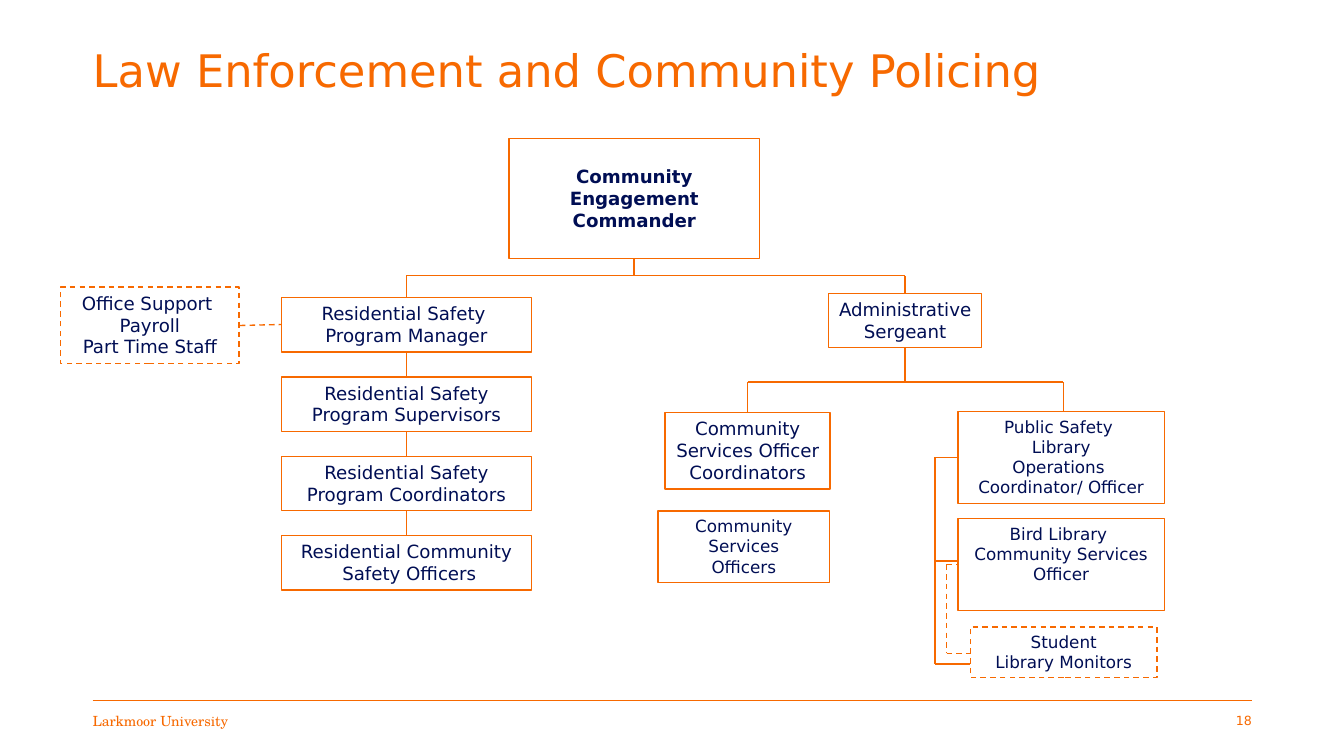
"""Build the law enforcement organization chart slide."""
from dataclasses import dataclass

from lxml import etree
from pptx import Presentation
from pptx.dml.color import RGBColor
from pptx.enum import dml, shapes, text
from pptx.oxml import ns
from pptx.util import Pt


@dataclass(frozen=True)
class Theme:
    orange: RGBColor = RGBColor(0xF7, 0x69, 0x00)
    navy: RGBColor = RGBColor(0x00, 0x0E, 0x54)
    sans: str = "DejaVu Sans"
    serif: str = "TeX Gyre Schola"
    title: float = 32
    body: float = 13
    small: float = 12
    footer: float = 10
    number: float = 9
    hairline: float = 0.5
    stroke: float = 1


THEME = Theme()
LEFT = text.PP_ALIGN.LEFT
RIGHT = text.PP_ALIGN.RIGHT
CENTER = text.PP_ALIGN.CENTER
TOP = text.MSO_ANCHOR.TOP
MIDDLE = text.MSO_ANCHOR.MIDDLE


def write(shape, wording, size, color, align=CENTER, anchor=TOP,
          font=THEME.sans, bold=False, side=7.2):
    """Fill a shape with text, one paragraph for each line of wording."""
    frame = shape.text_frame
    frame.text = wording
    frame.word_wrap = True
    frame.auto_size = text.MSO_AUTO_SIZE.NONE
    frame.vertical_anchor = anchor
    frame.margin_left = frame.margin_right = Pt(side)
    frame.margin_top = frame.margin_bottom = Pt(3.6)
    for para in frame.paragraphs:
        para.alignment = align
        for span in para.runs:
            span.font.name = font
            span.font.size = Pt(size)
            span.font.bold = bold
            span.font.color.rgb = color


def style_line(line, dashed=False, width=THEME.stroke):
    """Give an outline or connector the chart's stroke."""
    line.color.rgb = THEME.orange
    line.width = Pt(width)
    if dashed:
        line.dash_style = dml.MSO_LINE.DASH


def add_title(page, wording):
    """Place and format the title placeholder."""
    title = page.shapes.title
    title.left, title.top = Pt(66.24), Pt(0)
    title.width, title.height = Pt(828), Pt(104.4)
    write(title, wording, THEME.title, THEME.orange, LEFT, MIDDLE, side=0)
    title.text_frame.paragraphs[0].line_spacing = 0.9


def add_label(page, left, wording, size, font, align):
    """Add one footer text at the given left edge."""
    label = page.shapes.add_textbox(Pt(left), Pt(500.4), Pt(151.2), Pt(28.8))
    write(label, wording, size, THEME.orange, align, MIDDLE, font, side=0)


def add_box(page, place, wording, size=THEME.body, dashed=False, **style):
    """Add one outlined role box at (left, top, width, height)."""
    box = page.shapes.add_shape(
        shapes.MSO_SHAPE.RECTANGLE, *[Pt(length) for length in place])
    box.shadow.inherit = False
    box.fill.background()
    style_line(box.line, dashed)
    write(box, wording, size, THEME.navy, **style)


def add_link(page, x1, y1, x2, y2, dashed=False, width=THEME.stroke):
    """Add one straight line between two points."""
    link = page.shapes.add_connector(
        shapes.MSO_CONNECTOR.STRAIGHT, Pt(x1), Pt(y1), Pt(x2), Pt(y2))
    style_line(link.line, dashed, width)
    etree.SubElement(link._element.spPr, ns.qn("a:effectLst"))


def add_residential(page):
    """Add the residential safety column and its support staff."""
    roles = ["Residential Safety \nProgram Manager",
             "Residential Safety\nProgram Supervisors",
             "Residential Safety\nProgram Coordinators",
             "Residential Community\n Safety Officers"]
    first, step, height, center = 212.5, 56.7, 38.9, 290.2
    for index, role in enumerate(roles):
        top = first + index * step
        add_box(page, (200.9, top, 178.6, height), role)
        if index:
            add_link(page, center, top - step + height, center, top)
    add_box(page, (43.3, 205.1, 127.5, 54.7),
            "Office Support \nPayroll\nPart Time Staff", dashed=True)
    add_link(page, 171.3, 232.5, 200.9, 231.8, dashed=True)


def add_administrative(page):
    """Add the administrative sergeant and community services roles."""
    add_box(page, (591.8, 209.6, 109.4, 38.9), "Administrative Sergeant")
    add_box(page, (475, 294.7, 118, 54.7),
            "Community Services Officer Coordinators")
    add_box(page, (470, 365, 122.6, 51.1),
            "Community Services\nOfficers", THEME.small)
    add_link(page, 646.4, 248.5, 646.4, 273)
    add_link(page, 534, 273, 759.6, 273)
    add_link(page, 534, 273, 534, 294.7)
    add_link(page, 759.6, 273, 759.6, 293.8)


def add_library(page):
    """Add the library roles with their solid and dashed brackets."""
    add_box(page, (684.2, 293.8, 147.6, 65.7),
            "Public Safety \nLibrary\nOperations \nCoordinator/ Officer",
            THEME.small)
    add_box(page, (684.2, 370.5, 147.6, 65.5),
            "Bird Library \nCommunity Services\nOfficer", THEME.small)
    add_box(page, (693.2, 447.8, 133.2, 36.1),
            "Student\nLibrary Monitors", THEME.small, dashed=True)
    brackets = [(667.8, [(326.7, 684.2), (400.8, 684.2), (474.3, 693.2)], False),
                (676.1, [(403.2, 684.2), (466.6, 693.2)], True)]
    for spine, branches, dashed in brackets:
        add_link(page, spine, branches[0][0], spine, branches[-1][0], dashed)
        for level, end in branches:
            add_link(page, spine, level, end, level, dashed)


def main():
    """Create and save the slide."""
    deck = Presentation()
    deck.slide_width, deck.slide_height = Pt(960), Pt(540)
    page = deck.slides.add_slide(deck.slide_layouts[5])
    add_title(page, "Law Enforcement and Community Policing")
    add_link(page, 66.24, 500.4, 894.24, 500.4, width=THEME.hairline)
    add_label(page, 66.24, "Larkmoor University", THEME.footer,
              THEME.serif, LEFT)
    add_label(page, 743.04, "18", THEME.number, THEME.sans, RIGHT)
    add_box(page, (363.7, 98.9, 178.6, 85.7),
            "Community Engagement\nCommander", anchor=MIDDLE, bold=True)
    add_link(page, 453, 184.6, 453, 197)
    add_link(page, 290.2, 197, 646.4, 197)
    add_link(page, 290.2, 197, 290.2, 212.5)
    add_link(page, 646.4, 197, 646.4, 209.6)
    add_residential(page)
    add_administrative(page)
    add_library(page)
    deck.save("out.pptx")


if __name__ == "__main__":
    main()
